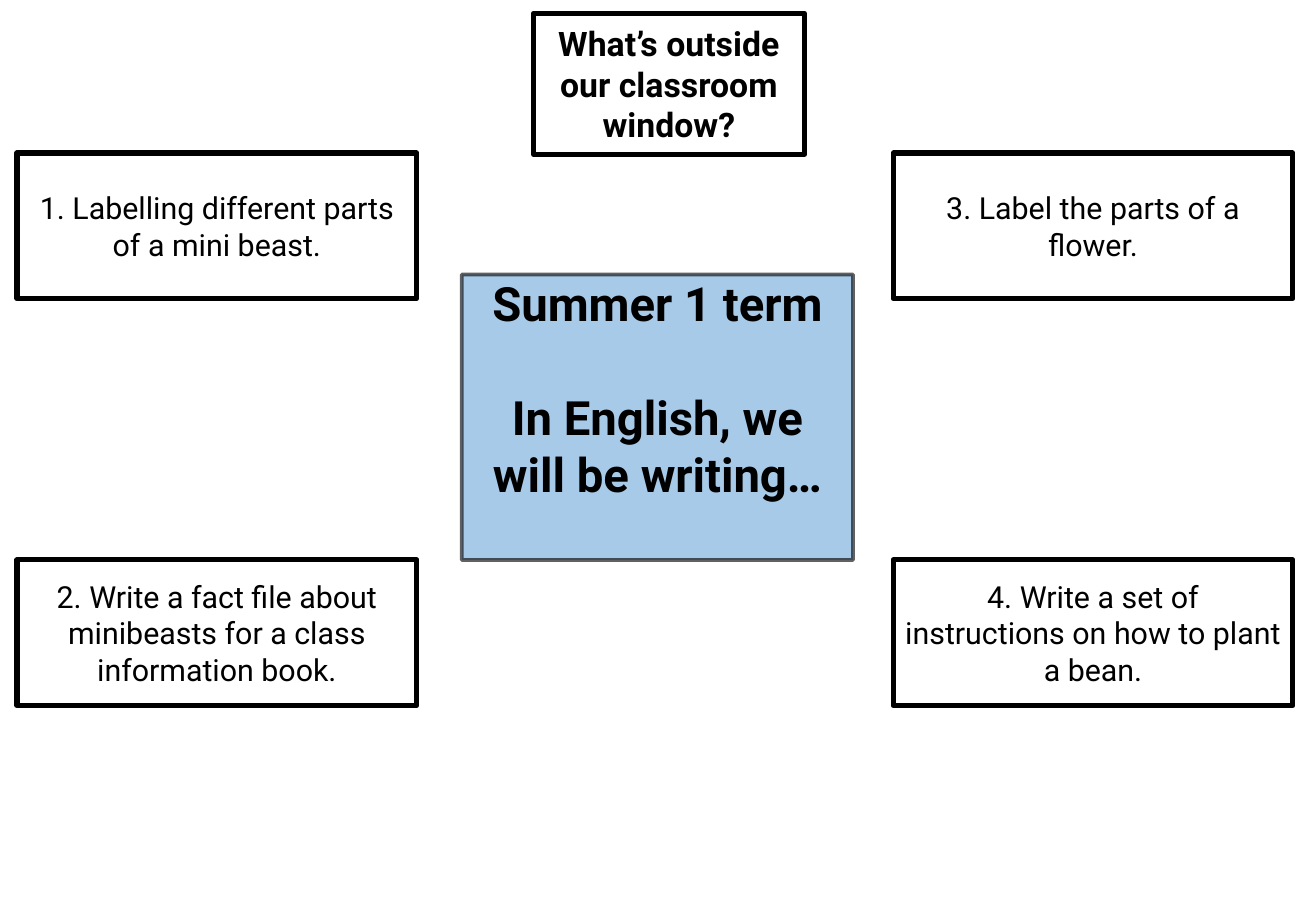
from itertools import product

from lxml.etree import SubElement
from pptx import Presentation
from pptx.dml.color import RGBColor
from pptx.enum.shapes import MSO_SHAPE
from pptx.enum.text import MSO_ANCHOR, PP_ALIGN
from pptx.oxml.ns import qn
from pptx.util import Inches, Pt

COLOURS = {"ink": "000000", "paper": "FFFFFF", "sky": "9DC3E6"}
CELL = 0.1  # inches per grid column and row
TITLE_ONLY = 5


class TermPlan:
    """Holds the text style and the page that the boxes are placed on."""

    font = {"name": "Roboto", "size": Pt(18), "bold": False}
    frame = {
        "word_wrap": True,
        "vertical_anchor": MSO_ANCHOR.MIDDLE,
        "margin_left": Inches(0.1),
        "margin_right": Inches(0.1),
        "margin_top": Inches(0.05),
        "margin_bottom": Inches(0.05),
    }

    def __init__(self, deck):
        self.page = deck.slides.add_slide(deck.slide_layouts[TITLE_ONLY])

    def apply(self, target, values):
        for name, value in values.items():
            setattr(target, name, value)

    def paint(self, fill, colour, opacity):
        """Give a fill a solid colour with an opacity in percent."""
        fill.solid()
        fill.fore_color.rgb = RGBColor.from_string(COLOURS[colour])
        if opacity < 100:
            colour_node = next(fill._xPr.iter(qn("a:srgbClr")))
            SubElement(colour_node, qn("a:alpha"), val=str(opacity * 1000))

    def outline(self, shape, width, opacity):
        shape.line.width = Pt(width)
        self.paint(shape.line.fill, "ink", opacity)

    def set_text(self, shape, paragraphs, gap=0, font=None, frame=None):
        self.apply(shape.text_frame, {**self.frame, **(frame or {})})
        shape.text_frame.text = "\n".join(paragraphs)
        for index, para in enumerate(shape.text_frame.paragraphs):
            para.alignment = PP_ALIGN.CENTER
            if index:
                para.space_before = Pt(gap)
            for span in para.runs:
                self.apply(span.font, {**self.font, **(font or {})})
                span.font.color.rgb = RGBColor.from_string(COLOURS["ink"])

    def place(self, shape, left, top, columns, rows):
        sides = {"left": left, "top": top, "width": columns, "height": rows}
        self.apply(shape, {side: Inches(cells * CELL) for side, cells in sides.items()})

    def title(self, text, area):
        box = self.page.shapes.title
        self.place(box, *area)
        self.paint(box.fill, "paper", 64)
        self.outline(box, 3, 100)
        self.set_text(box, [text], font={"size": Pt(20), "bold": True})

    def box(self, paragraphs, area, fill=("paper", 64), line=(3, 100), **text):
        box = self.page.shapes.add_shape(MSO_SHAPE.RECTANGLE, 0, 0, 0, 0)
        box.shadow.inherit = False
        self.place(box, *area)
        self.paint(box.fill, *fill)
        self.outline(box, *line)
        self.set_text(box, paragraphs, **text)


def main():
    deck = Presentation()
    deck.slide_width, deck.slide_height = Inches(10.83), Inches(7.5)
    plan = TermPlan(deck)

    plan.title("What’s outside our classroom window?", (43.9, 1.1, 22.3, 11.6))
    plan.box(
        ["Summer 1 term", "In English, we will be writing…"],
        (38, 22.6, 32.2, 23.5),
        fill=("sky", 88),
        line=(2.25, 61),
        gap=34,
        font={"size": Pt(28), "bold": True},
        frame={"vertical_anchor": MSO_ANCHOR.TOP, "margin_top": 0},
    )

    tasks = [
        "1. Labelling different parts of a mini beast.",
        "2. Write a fact file about minibeasts for a class information book.",
        "3. Label the parts of a flower.",
        "4. Write a set of instructions on how to plant a bean.",
    ]
    for task, (left, top) in zip(tasks, product((1.4, 73.5), (12.6, 46.1))):
        plan.box([task], (left, top, 32.9, 12))

    deck.save("out.pptx")


if __name__ == "__main__":
    main()
